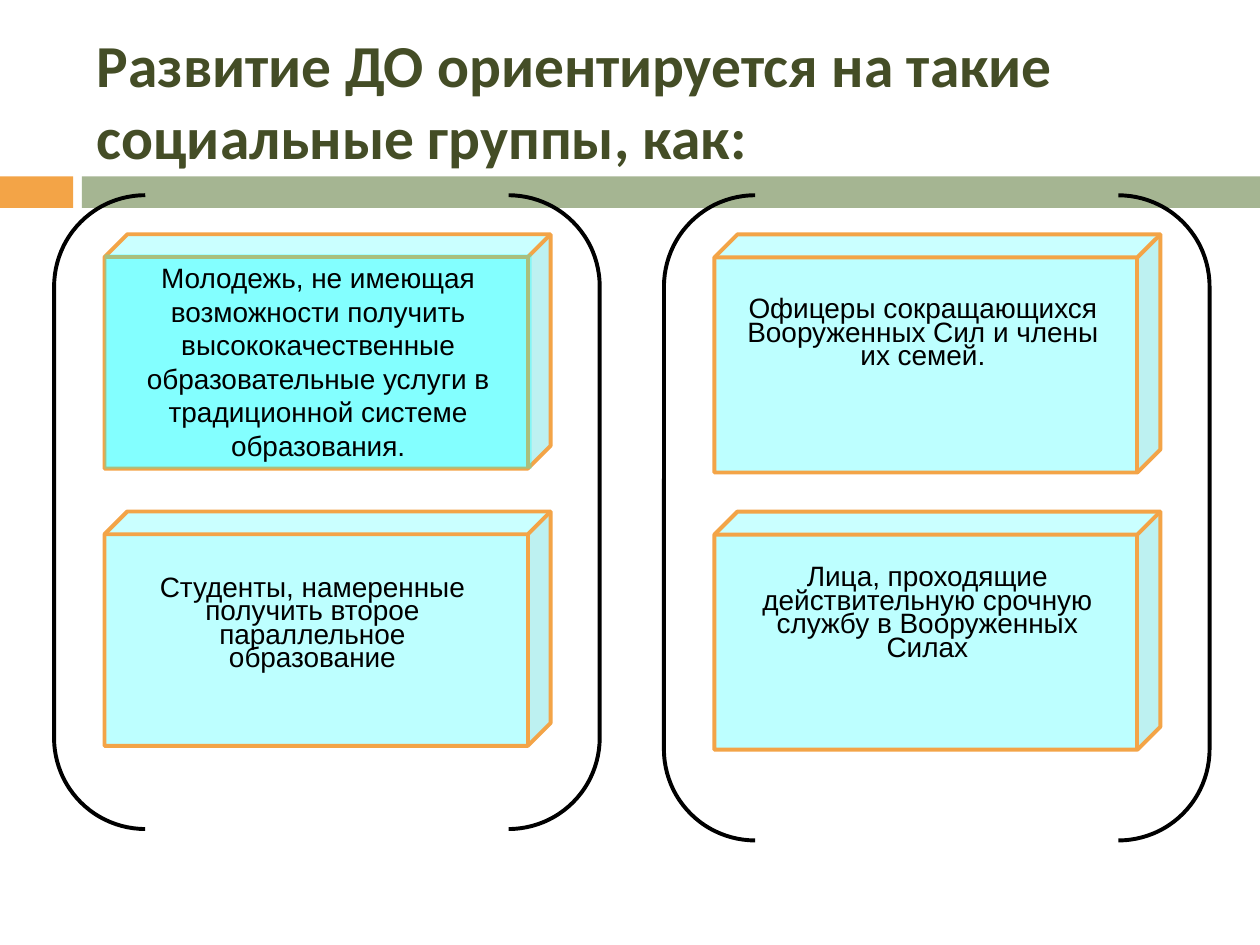
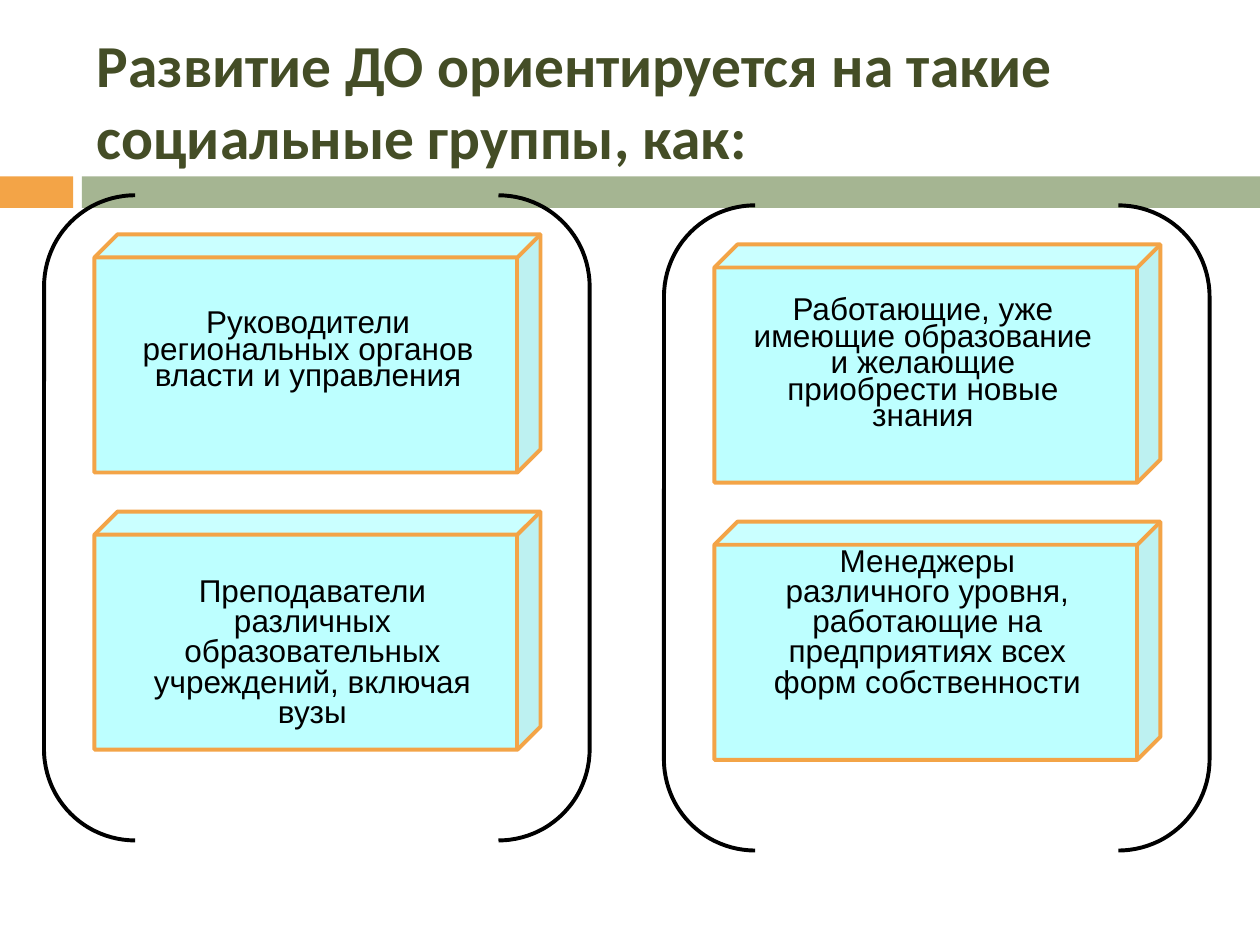
from dataclasses import dataclass
from lxml.etree import SubElement
from pptx import Presentation
from pptx.dml.color import RGBColor as RGB
from pptx.enum.shapes import MSO_SHAPE as Form
from pptx.enum.text import MSO_ANCHOR as Anchor, PP_ALIGN as Align
from pptx.oxml.ns import qn
from pptx.util import Inches, Pt


@dataclass(frozen=True)
class Theme:
    amber: str = "F3A447"
    sage: str = "A5B592"
    olive: str = "444D26"
    cyan: str = "00FFFF"
    black: str = "000000"
    head: str = "Calibri"
    body: str = "Arial"
    big: float = 34
    small: float = 16
    mid: float = 18
    edge: float = 2.25


THEME = Theme()
TITLE = "Развитие ДО ориентируется на такие социальные группы, как:"


@dataclass(frozen=True)
class Area:
    left: float
    top: float
    width: float
    height: float

    def lengths(self) -> list:
        return [Inches(n) for n in (self.left, self.top, self.width, self.height)]


@dataclass(frozen=True)
class Panel:
    left: float
    top: float
    height: float
    deep: float


@dataclass(frozen=True)
class Note:
    area: Area
    text: str
    size: float
    lead: float = 0.7
    before: int = 30
    inset: float = 0.05
    tint: int = 0


@dataclass(frozen=True)
class Page:
    panels: tuple
    notes: tuple


def shape(slide, form, area: Area, fill: str = "", alpha: int = 100, line: str = "", adj: float = 0):
    item = slide.shapes.add_shape(form, *area.lengths())
    item.shadow.inherit = False
    if adj:
        item.adjustments[0] = adj
    if fill:
        item.fill.solid()
        item.fill.fore_color.rgb = RGB.from_string(fill)
        if alpha < 100:
            tone = item.fill._xPr.find(qn("a:solidFill"))[0]
            SubElement(tone, qn("a:alpha"), val=str(alpha * 1000))
    else:
        item.fill.background()
    if line:
        item.line.color.rgb = RGB.from_string(line)
        item.line.width = Pt(THEME.edge)
    else:
        item.line.fill.background()
    return item


def write(item, text: str, color: str, frame: dict, para: dict, font: dict):
    body = item.text_frame
    line = body.paragraphs[0]
    run = line.add_run()
    run.text = text
    run.font.color.rgb = RGB.from_string(color)
    for part, form in ((body, frame), (line, para), (run.font, font)):
        for name, value in form.items():
            setattr(part, name, value)
    return line


def head(slide):
    shape(slide, Form.RECTANGLE, Area(0, 1.4, 0.58, 0.25), THEME.amber)
    shape(slide, Form.RECTANGLE, Area(0.65, 1.4, 9.35, 0.25), THEME.sage)
    box = slide.shapes.add_textbox(*Area(0.67, 0.25, 8.92, 1.08).lengths())
    write(box, TITLE, THEME.olive,
          {"word_wrap": True, "vertical_anchor": Anchor.MIDDLE}, {},
          {"name": THEME.head, "size": Pt(THEME.big), "bold": True})


def frame(slide, panel: Panel):
    shape(slide, Form.DOUBLE_BRACKET, Area(panel.left, panel.top, 4.33, panel.height),
          line=THEME.black, adj=0.167)
    for row in range(2):
        area = Area(panel.left + 0.4, panel.top + 0.31 + 2.2 * row, 3.54, panel.deep)
        shape(slide, Form.CUBE, area, THEME.cyan, 26, THEME.amber, 0.097)


def label(slide, note: Note):
    if note.tint:
        box = shape(slide, Form.RECTANGLE, note.area, THEME.cyan, note.tint)
    else:
        box = slide.shapes.add_textbox(*note.area.lengths())
    line = write(box, note.text, THEME.black,
                 {"word_wrap": True, "vertical_anchor": Anchor.TOP, "margin_top": Inches(note.inset)},
                 {"alignment": Align.CENTER, "line_spacing": note.lead, "space_before": Pt(0)},
                 {"name": THEME.body, "size": Pt(note.size)})
    gap = line._p.pPr.find(qn("a:spcBef"))
    gap.remove(gap[0])
    SubElement(gap, qn("a:spcPct"), val=str(note.before * 1000))


PAGES = (
    Page(
        (Panel(0.43, 1.55, 5.03, 1.86), Panel(5.27, 1.55, 5.12, 1.89)),
        (
            Note(Area(0.83, 2.02, 3.39, 1.7),
                 "Молодежь, не имеющая возможности получить высококачественные "
                 "образовательные услуги в традиционной системе образования.",
                 THEME.small, 1.0, 50, tint=30),
            Note(Area(5.79, 2.33, 3.07, 1.25),
                 "Офицеры сокращающихся Вооруженных Сил и члены их семей.", THEME.small),
            Note(Area(5.94, 4.46, 2.84, 1.25),
                 "Лица, проходящие действительную срочную службу в Вооруженных Силах", THEME.small),
            Note(Area(1.06, 4.54, 2.84, 1.25),
                 "Студенты, намеренные получить второе параллельное образование", THEME.small),
        ),
    ),
    Page(
        (Panel(0.35, 1.55, 5.12, 1.89), Panel(5.27, 1.63, 5.12, 1.89)),
        (
            Note(Area(0.75, 2.02, 3.39, 1.35),
                 "Руководители региональных органов власти и управления", THEME.mid, inset=0.46),
            Note(Area(5.79, 2.33, 3.07, 1.36),
                 "Работающие, уже имеющие образование и желающие приобрести новые знания", THEME.mid),
            Note(Area(5.94, 4.3, 2.84, 1.54),
                 "Менеджеры различного уровня, работающие на предприятиях всех форм собственности",
                 THEME.mid, 0.8),
            Note(Area(1.06, 4.54, 2.84, 1.3),
                 "Преподаватели различных образовательных учреждений, включая вузы", THEME.mid, 0.8),
        ),
    ),
)


def main():
    deck = Presentation()
    deck.slide_width, deck.slide_height = Inches(10), Inches(7.5)
    for page in PAGES:
        slide = deck.slides.add_slide(deck.slide_layouts[6])
        head(slide)
        for panel in page.panels:
            frame(slide, panel)
        for note in page.notes:
            label(slide, note)
    deck.save("out.pptx")


if __name__ == "__main__":
    main()
